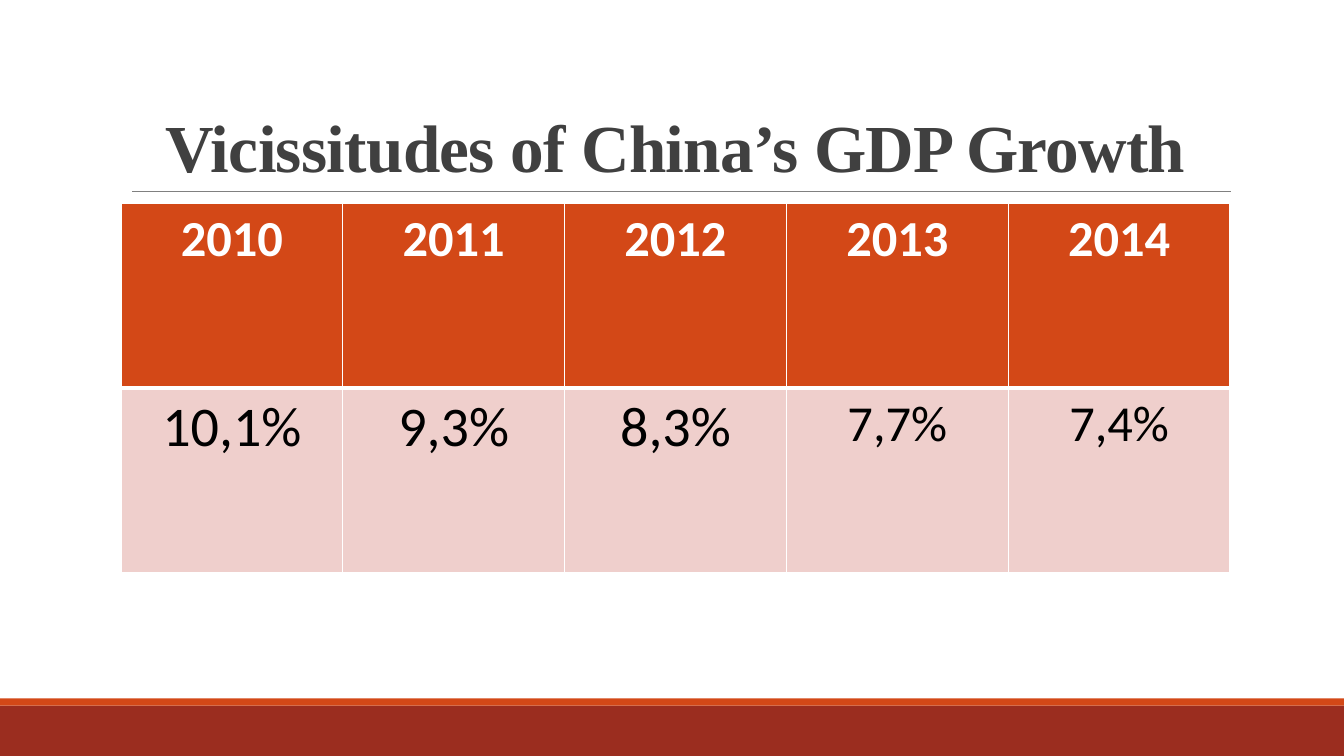
"""Build a slide with a table of China's GDP growth from 2010 to 2014."""
from dataclasses import dataclass

from lxml.etree import SubElement
from pptx import Presentation
from pptx.dml.color import RGBColor
from pptx.enum.shapes import MSO_CONNECTOR, MSO_SHAPE
from pptx.enum.text import MSO_ANCHOR, PP_ALIGN
from pptx.oxml.ns import qn
from pptx.util import Inches, Pt

TITLE = "Vicissitudes of China’s GDP Growth"
GROWTH = [
    ("2010", "10,1%", 40),
    ("2011", "9,3%", 40),
    ("2012", "8,3%", 40),
    ("2013", "7,7%", 36),
    ("2014", "7,4%", 36),
]
WIDTH, HEIGHT = 13.33, 7.5
LEFT, CONTENT_WIDTH = 1.2, 11
TABLE_TOP, ROW_HEIGHT = 2.02, 1.83


@dataclass(frozen=True)
class Theme:
    """Colours, fonts and type sizes."""
    orange: str = "D34817"
    red: str = "9B2D1F"
    pink: str = "EFCFCC"
    rule: str = "808080"
    title: str = "404040"
    white: str = "FFFFFF"
    black: str = "000000"
    title_font: str = "Times New Roman"
    body_font: str = "Calibri"
    title_size: int = 48
    header_size: int = 36


THEME = Theme()


def rgb(colour):
    return RGBColor.from_string(colour)


def write(text_frame, text, font_name, size, colour, bold):
    text_frame.text = text
    paragraph = text_frame.paragraphs[0]
    paragraph.alignment = PP_ALIGN.CENTER
    font = paragraph.runs[0].font
    font.name, font.size, font.bold = font_name, Pt(size), bold
    font.color.rgb = rgb(colour)
    return paragraph


def add_band(slide, top, height, colour):
    band = slide.shapes.add_shape(
        MSO_SHAPE.RECTANGLE, 0, Inches(top), Inches(WIDTH), Inches(height))
    band.shadow.inherit = False
    band.fill.solid()
    band.fill.fore_color.rgb = rgb(colour)
    band.line.fill.background()


def add_title_rule(slide):
    rule = slide.shapes.add_connector(
        MSO_CONNECTOR.STRAIGHT, Inches(1.31), Inches(1.9), Inches(12.21), Inches(1.9))
    rule.line.color.rgb = rgb(THEME.rule)
    rule.line.width = Pt(0.5)
    SubElement(rule.element.spPr, qn("a:effectLst"))


def add_title(slide):
    box = slide.shapes.add_textbox(
        Inches(LEFT), Inches(0.31), Inches(CONTENT_WIDTH), Inches(1.59))
    text_frame = box.text_frame
    text_frame.word_wrap = True
    text_frame.vertical_anchor = MSO_ANCHOR.BOTTOM
    paragraph = write(
        text_frame, TITLE, THEME.title_font, THEME.title_size, THEME.title, True)
    paragraph.line_spacing = 0.85
    paragraph.runs[0].font._element.set("spc", "-50")


def set_borders(cell, top, bottom):
    properties = cell._tc.get_or_add_tcPr()
    for side, width in (("L", 1), ("R", 1), ("T", top), ("B", bottom)):
        border = SubElement(properties, qn(f"a:ln{side}"), w=str(Pt(width)))
        fill = SubElement(border, qn("a:solidFill"))
        SubElement(fill, qn("a:srgbClr"), val=THEME.white)


def format_cell(cell, text, size, colour, bold, fill, top, bottom):
    write(cell.text_frame, text, THEME.body_font, size, colour, bold)
    set_borders(cell, top, bottom)
    cell.fill.solid()
    cell.fill.fore_color.rgb = rgb(fill)


def add_growth_table(slide):
    table = slide.shapes.add_table(
        2, len(GROWTH), Inches(LEFT), Inches(TABLE_TOP),
        Inches(CONTENT_WIDTH), Inches(2 * ROW_HEIGHT)).table
    for row in table.rows:
        row.height = Inches(ROW_HEIGHT)
    for index, (year, rate, rate_size) in enumerate(GROWTH):
        table.columns[index].width = Inches(CONTENT_WIDTH / len(GROWTH))
        format_cell(table.cell(0, index), year, THEME.header_size,
                    THEME.white, True, THEME.orange, 1, 3)
        format_cell(table.cell(1, index), rate, rate_size,
                    THEME.black, False, THEME.pink, 3, 1)


def main():
    presentation = Presentation()
    presentation.slide_width = Inches(WIDTH)
    presentation.slide_height = Inches(HEIGHT)
    slide = presentation.slides.add_slide(presentation.slide_layouts[6])
    add_band(slide, 7, 0.5, THEME.red)
    add_band(slide, 6.93, 0.07, THEME.orange)
    add_title_rule(slide)
    add_title(slide)
    add_growth_table(slide)
    presentation.save("out.pptx")


if __name__ == "__main__":
    main()
